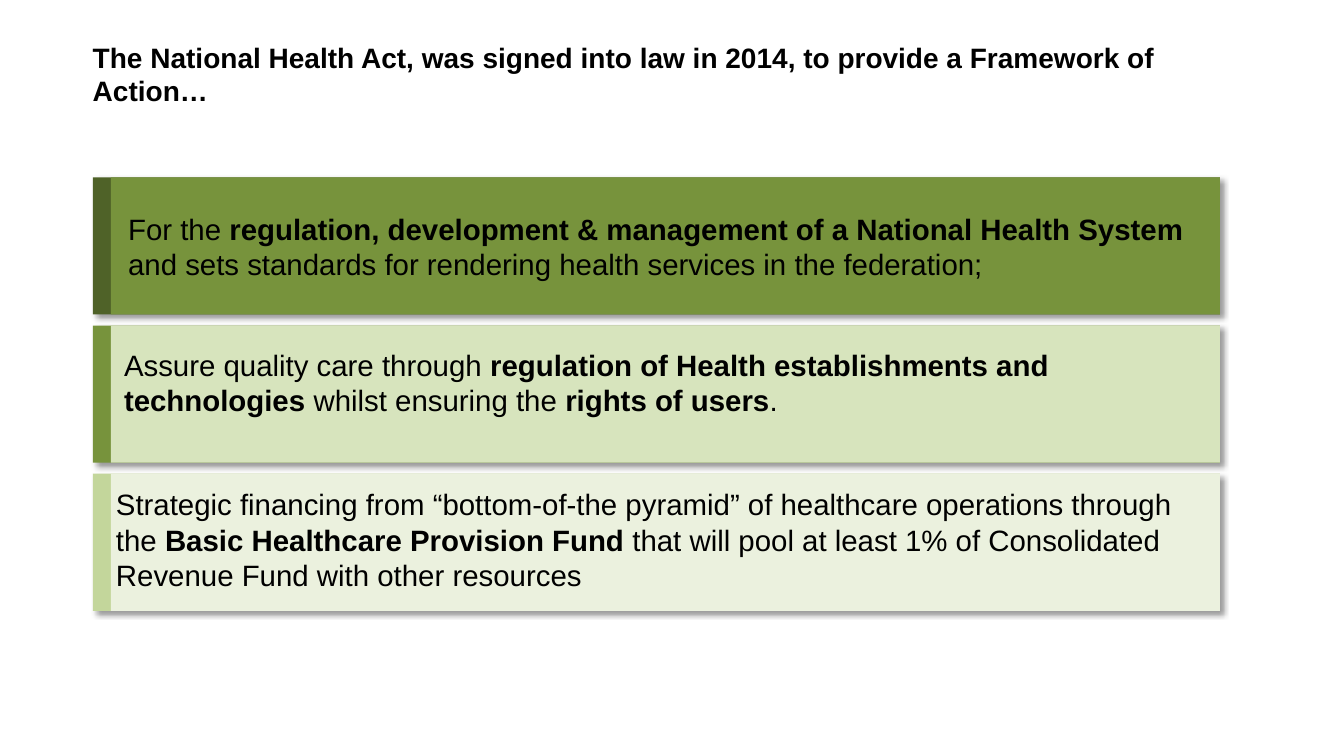
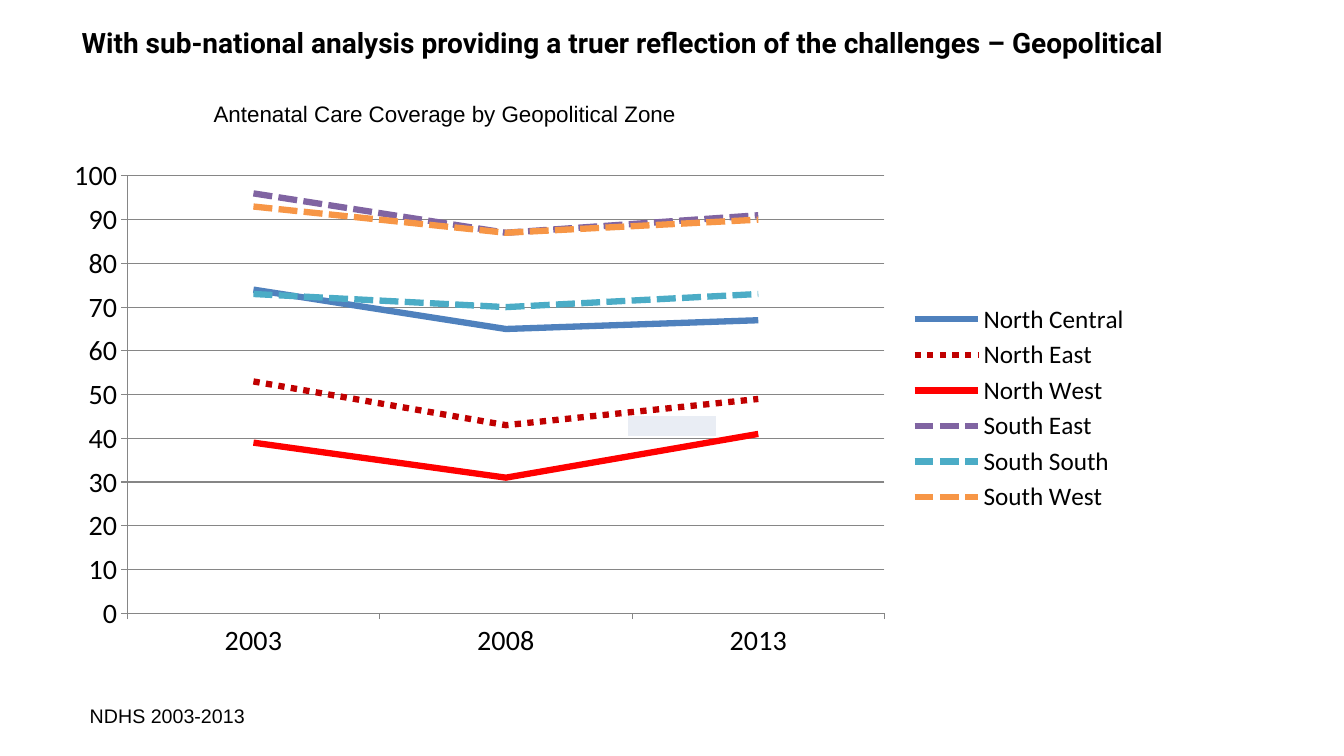
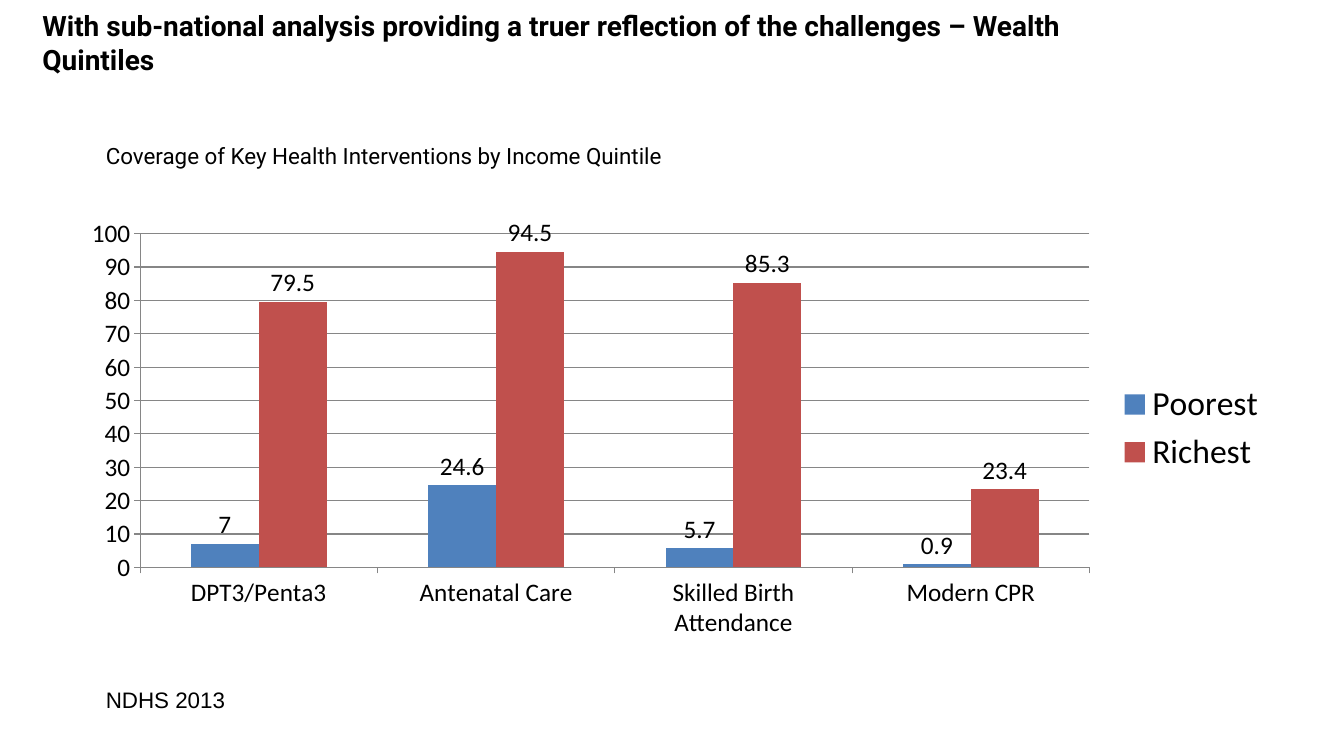
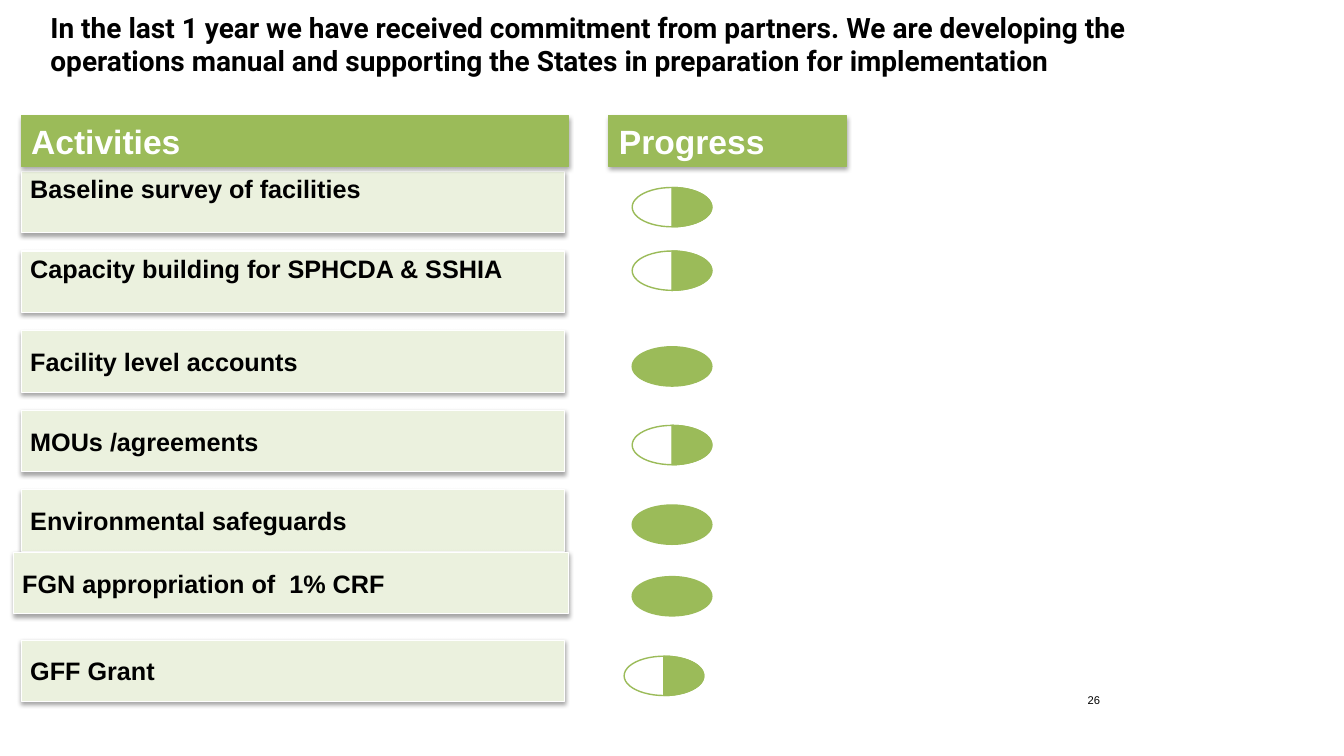
from dataclasses import dataclass

from lxml import etree
from pptx import Presentation
from pptx.chart.data import CategoryChartData
from pptx.dml.color import RGBColor
from pptx.enum.chart import XL_CHART_TYPE, XL_LABEL_POSITION, XL_LEGEND_POSITION, XL_TICK_MARK
from pptx.enum.dml import MSO_LINE
from pptx.enum.shapes import MSO_SHAPE
from pptx.enum.text import MSO_ANCHOR, PP_ALIGN
from pptx.oxml.ns import qn
from pptx.util import Inches, Pt

RECTANGLE, OVAL, CHORD = MSO_SHAPE.RECTANGLE, MSO_SHAPE.OVAL, MSO_SHAPE.CHORD
TOP, MIDDLE = MSO_ANCHOR.TOP, MSO_ANCHOR.MIDDLE
LEFT, RIGHT = PP_ALIGN.LEFT, PP_ALIGN.RIGHT
LINE_CHART, COLUMN_CHART = XL_CHART_TYPE.LINE, XL_CHART_TYPE.COLUMN_CLUSTERED
SOLID, DOTTED, DASHED = MSO_LINE.SOLID, MSO_LINE.ROUND_DOT, MSO_LINE.SQUARE_DOT
LEGEND_RIGHT = XL_LEGEND_POSITION.RIGHT
OUTSIDE_END = XL_LABEL_POSITION.OUTSIDE_END
TICK_OUTSIDE = XL_TICK_MARK.OUTSIDE


@dataclass(frozen=True)
class Theme:
    black: str = "000000"
    white: str = "FFFFFF"
    darkest_green: str = "4F6228"
    dark_green: str = "77933C"
    green: str = "9BBB59"
    mid_green: str = "C3D69B"
    light_green: str = "D7E4BD"
    pale_green: str = "EBF1DE"
    pale_blue: str = "E9EDF4"
    grid: str = "868686"
    body_font: str = "Arial"
    title_font: str = "Roboto"
    chart_font: str = "Calibri"
    title: int = 20
    statement: int = 21
    heading: int = 24
    activity: int = 18
    subtitle: int = 16
    source: int = 14
    page_number: int = 8


THEME = Theme()
NO_INSETS = (0, 0)
WIDE_INSETS = (0.13, 0.07)
# Shadows: opacity %, blur pt, distance pt, direction in degrees
CARD_SHADOW = (40, 4, 3, 45)
BAR_SHADOW = (35, 3.15, 1.8, 90)

# ---- Content ----
ACT_TITLE = ("The National Health Act, was signed into law in 2014, "
             "to provide a Framework of Action…")
# Edge colour, panel colour, text box, runs (text, bold)
ACT_CARDS = [
    (THEME.darkest_green, THEME.dark_green, (1.27, 2.09, 10.68, 0.71), [
        ("For the ", False),
        ("regulation, development & management of a National Health System ", True),
        ("and sets standards for rendering health services in the federation;", False)]),
    (THEME.dark_green, THEME.light_green, (1.23, 3.44, 10.68, 0.71), [
        ("Assure quality care through ", False),
        ("regulation of Health establishments and technologies", True),
        (" whilst ensuring the ", False),
        ("rights of users", True),
        (".", False)]),
    (THEME.mid_green, THEME.pale_green, (1.15, 4.82, 10.68, 1.06), [
        ("Strategic financing from “bottom-of-the pyramid” of healthcare "
         "operations through the ", False),
        ("Basic Healthcare Provision Fund ", True),
        ("that will pool at least 1% of Consolidated Revenue Fund "
         "with other resources", False)]),
]

ZONE_TITLE = ("With sub-national analysis providing a truer reflection "
              "of the challenges – Geopolitical")
ZONE_SUBTITLE = "Antenatal Care Coverage by Geopolitical Zone"
ZONE_SOURCE = "NDHS 2003-2013"
ZONE_YEARS = ["2003", "2008", "2013"]
# Zone, coverage, colour, dash
ZONES = [
    ("North Central", (74, 65, 67), "4F81BD", SOLID),
    ("North East", (53, 43, 49), "C00000", DOTTED),
    ("North West", (39, 31, 41), "FF0000", SOLID),
    ("South East", (96, 87, 91), "8064A2", DASHED),
    ("South South", (73, 70, 73), "4BACC6", DASHED),
    ("South West", (93, 87, 90), "F79646", DASHED),
]

WEALTH_TITLE = ("With sub-national analysis providing a truer reflection "
                "of the challenges – Wealth Quintiles")
WEALTH_SUBTITLE = "Coverage of Key Health Interventions by Income Quintile"
WEALTH_SOURCE = "NDHS 2013"
INTERVENTIONS = ["DPT3/Penta3", "Antenatal Care", "Skilled Birth Attendance", "Modern CPR"]
QUINTILES = [
    ("Poorest", (7, 24.6, 5.7, 0.9), "4F81BD"),
    ("Richest", (79.5, 94.5, 85.3, 23.4), "C0504D"),
]

PROGRESS_TITLE = ("In the last 1 year we have received commitment from partners. "
                  "We are developing the operations manual and supporting the States "
                  "in preparation for implementation")
PROGRESS_HEADINGS = [("Activities", 0.21, 5.43), ("Progress", 6.04, 2.36)]
# Activity, anchor, done, marker top
ACTIVITIES = [
    ("Baseline survey of facilities", TOP, False, 1.86),
    ("Capacity building for SPHCDA & SSHIA", TOP, False, 2.49),
    ("Facility level accounts", MIDDLE, True, 3.44),
    ("MOUs /agreements", MIDDLE, False, 4.22),
    ("Environmental safeguards", MIDDLE, True, 5.01),
    ("FGN appropriation of  1% CRF", MIDDLE, True, 5.72),
    ("GFF Grant", MIDDLE, False, 6.51),
]
# Rows that leave the regular column: left, top, width
MOVED_BARS = {5: (0.13, 5.48, 5.51), 6: (0.21, 6.35, 5.39)}
MOVED_MARKERS = {6: 6.19}
PAGE_NUMBER = "26"


# ---- Shared helpers ----
def color(value):
    return RGBColor.from_string(value)


def place(box):
    return [Inches(length) for length in box]


def fill_text(shape, runs, size, font=THEME.body_font, ink=THEME.black,
              insets=NO_INSETS, anchor=MIDDLE, align=LEFT):
    frame = shape.text_frame
    frame.word_wrap = True
    frame.vertical_anchor = anchor
    frame.margin_left = frame.margin_right = Inches(insets[0])
    frame.margin_top = frame.margin_bottom = Inches(insets[1])
    paragraph = frame.paragraphs[0]
    paragraph.alignment = align
    for text, bold in runs:
        run = paragraph.add_run()
        run.text = text
        run.font.name = font
        run.font.size = Pt(size)
        run.font.bold = bold
        run.font.color.rgb = color(ink)


def add_text(slide, box, runs, size, **style):
    fill_text(slide.shapes.add_textbox(*place(box)), runs, size, **style)


def add_title(slide, box, text, font=THEME.title_font, insets=WIDE_INSETS, anchor=MIDDLE):
    add_text(slide, box, [(text, True)], THEME.title, font=font, insets=insets, anchor=anchor)


def add_shadow(shape, opacity, blur, distance, direction):
    effects = shape._element.spPr.find(qn("a:effectLst"))
    shadow = etree.SubElement(effects, qn("a:outerShdw"), blurRad=str(Pt(blur)),
                              dist=str(Pt(distance)), dir=str(direction * 60000),
                              algn="tl", rotWithShape="0")
    ink = etree.SubElement(shadow, qn("a:srgbClr"), val=THEME.black)
    etree.SubElement(ink, qn("a:alpha"), val=str(opacity * 1000))


def add_shape(slide, kind, box, fill, line=None, width=0.75, shadow=None):
    shape = slide.shapes.add_shape(kind, *place(box))
    shape.shadow.inherit = False
    shape.fill.solid()
    shape.fill.fore_color.rgb = color(fill)
    if line:
        shape.line.color.rgb = color(line)
        shape.line.width = Pt(width)
    else:
        shape.line.fill.background()
    if shadow:
        add_shadow(shape, *shadow)
    return shape


def add_chart(slide, kind, box, categories, series, axis_size, legend_size):
    data = CategoryChartData()
    data.categories = categories
    for name, values, *_ in series:
        data.add_series(name, values)
    chart = slide.shapes.add_chart(kind, *place(box), data).chart
    chart.has_title = False
    chart.font.name = THEME.chart_font
    chart.font.size = Pt(axis_size)
    chart.font.color.rgb = color(THEME.black)
    chart.has_legend = True
    chart.legend.position = LEGEND_RIGHT
    chart.legend.include_in_layout = False
    chart.legend.font.size = Pt(legend_size)
    chart.plots[0].vary_by_categories = False
    chart.value_axis.minimum_scale = 0
    chart.value_axis.maximum_scale = 100
    chart.value_axis.major_unit = 10
    chart.value_axis.has_major_gridlines = True
    for axis in (chart.category_axis, chart.value_axis):
        axis.major_tick_mark = TICK_OUTSIDE
        axis.tick_labels.font.size = Pt(axis_size)
    for part in (chart.category_axis, chart.value_axis, chart.value_axis.major_gridlines):
        part.format.line.color.rgb = color(THEME.grid)
        part.format.line.width = Pt(0.75)
    return chart


# ---- Slides ----
def build_act(slide):
    add_title(slide, (0.92, 0.4, 11.5, 0.67), ACT_TITLE,
              font=THEME.body_font, insets=NO_INSETS, anchor=TOP)
    left, top, width, height, pitch, edge = 0.92, 1.76, 11.18, 1.36, 1.47, 0.18
    for index, (edge_fill, panel_fill, text_box, runs) in enumerate(ACT_CARDS):
        card_top = top + index * pitch
        add_shape(slide, RECTANGLE, (left, card_top, width, height), edge_fill,
                  shadow=CARD_SHADOW)
        add_shape(slide, RECTANGLE, (left + edge, card_top, width - edge, height), panel_fill)
        add_text(slide, text_box, runs, THEME.statement)


def build_zones(slide):
    add_title(slide, (0.68, 0.08, 11.33, 0.68), ZONE_TITLE)

    # Single empty cell behind the chart
    table = slide.shapes.add_table(1, 1, *place((6.22, 4.12, 0.89, 0.21))).table
    cell = table.cell(0, 0)
    cell.fill.solid()
    cell.fill.fore_color.rgb = color(THEME.pale_blue)
    cell.margin_top = cell.margin_bottom = 0
    etree.SubElement(cell.text_frame.paragraphs[0]._p, qn("a:endParaRPr"),
                     sz=str(THEME.page_number * 100))

    chart = add_chart(slide, LINE_CHART, (0.52, 1.47, 10.79, 5.16), ZONE_YEARS, ZONES,
                      axis_size=20, legend_size=18)
    for series, (_, _, ink, dash) in zip(chart.plots[0].series, ZONES):
        series.smooth = False
        series.format.line.color.rgb = color(ink)
        series.format.line.width = Pt(4.5)
        series.format.line.dash_style = dash

    add_text(slide, (0.76, 6.9, 3.11, 0.4), [(ZONE_SOURCE, False)], THEME.source,
             insets=WIDE_INSETS)
    add_text(slide, (2.02, 0.94, 8.19, 0.37), [(ZONE_SUBTITLE, False)], THEME.subtitle,
             insets=(0.1, 0.05), anchor=TOP)


def build_wealth(slide):
    add_title(slide, (0.29, 0.08, 11.33, 0.68), WEALTH_TITLE)
    add_text(slide, (0.92, 1.15, 9.97, 0.78), [(WEALTH_SUBTITLE, False)], THEME.subtitle,
             font=THEME.title_font, insets=WIDE_INSETS)

    chart = add_chart(slide, COLUMN_CHART, (0.67, 2.08, 12, 4.34), INTERVENTIONS, QUINTILES,
                      axis_size=18, legend_size=24)
    plot = chart.plots[0]
    plot.gap_width = 150
    plot.overlap = 0
    for series, (_, _, ink) in zip(plot.series, QUINTILES):
        series.format.fill.solid()
        series.format.fill.fore_color.rgb = color(ink)
        labels = series.data_labels
        labels.show_value = True
        labels.position = OUTSIDE_END
        labels.font.size = Pt(18)

    add_text(slide, (0.92, 6.74, 3.11, 0.4), [(WEALTH_SOURCE, False)], THEME.subtitle,
             insets=WIDE_INSETS)


def add_marker(slide, left, top, done):
    box = (left, top, 0.79, 0.39)
    add_shape(slide, OVAL, box, THEME.green if done else THEME.white, THEME.green, 1)
    if not done:
        half = add_shape(slide, CHORD, box, THEME.green, THEME.green, 1)
        # Angles from top (270 degrees) to bottom (90 degrees)
        half.adjustments[0] = 162
        half.adjustments[1] = 54


def build_progress(slide):
    add_title(slide, (0.37, 0.06, 11.42, 0.75), PROGRESS_TITLE)
    for index, (activity, anchor, done, marker_top) in enumerate(ACTIVITIES):
        left, top, width = MOVED_BARS.get(index, (0.21, 1.7 + index * 0.79, 5.39))
        bar = add_shape(slide, RECTANGLE, (left, top, width, 0.61), THEME.pale_green,
                        THEME.white, shadow=BAR_SHADOW)
        fill_text(bar, [(activity, True)], THEME.activity, anchor=anchor,
                  insets=(0.09, 0.02))
        add_marker(slide, MOVED_MARKERS.get(index, 6.27), marker_top, done)
    for heading, left, width in PROGRESS_HEADINGS:
        bar = add_shape(slide, RECTANGLE, (left, 1.15, width, 0.5), THEME.green,
                        THEME.green, shadow=BAR_SHADOW)
        fill_text(bar, [(heading, True)], THEME.heading, ink=THEME.white,
                  insets=(0.1, 0.05), anchor=TOP)
    add_text(slide, (7.93, 6.74, 3.11, 0.4), [(PAGE_NUMBER, False)], THEME.page_number,
             insets=WIDE_INSETS, align=RIGHT)


def main():
    presentation = Presentation()
    presentation.slide_width = Inches(13.33)
    presentation.slide_height = Inches(7.5)
    blank = presentation.slide_layouts[6]
    for build in (build_act, build_zones, build_wealth, build_progress):
        build(presentation.slides.add_slide(blank))
    presentation.save("out.pptx")


if __name__ == "__main__":
    main()
